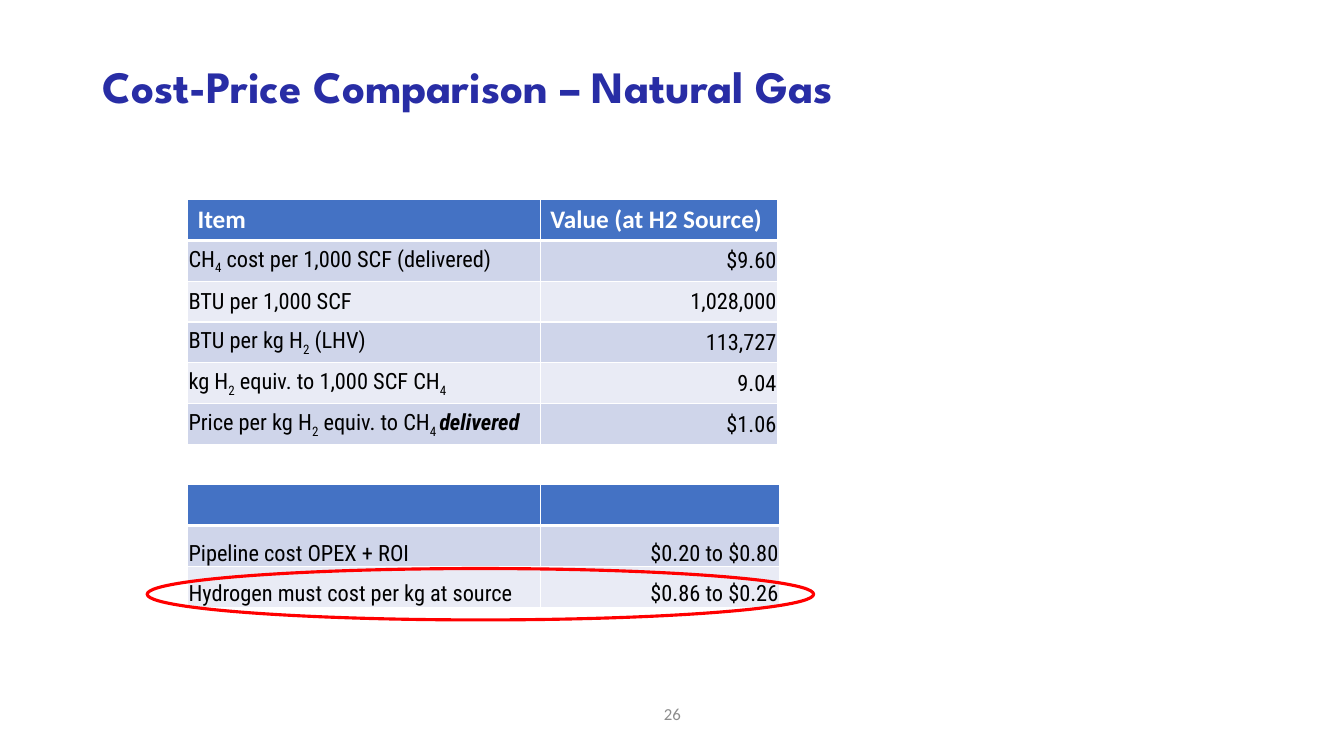
import pptx
import pptx.util
import pptx.dml.color
import pptx.enum.shapes
import pptx.enum.text
import pptx.oxml.ns
from lxml import etree

Inches = pptx.util.Inches
Pt = pptx.util.Pt
ALIGN = pptx.enum.text.PP_ALIGN
ANCHOR = pptx.enum.text.MSO_ANCHOR

COLORS = {
    "title": "282DA5", "number": "8C8C8C", "header": "4472C4",
    "odd_band": "CFD5EA", "even_band": "E9EBF5",
    "white": "FFFFFF", "black": "000000", "highlight": "FF0000",
}
FORMATS = {
    "title": {"size": Pt(32), "name": "League Spartan", "bold": True},
    "number": {"size": Pt(12), "name": "Calibri"},
    "header": {"size": Pt(18), "name": "Calibri", "bold": True},
    "body": {"size": Pt(16), "name": "Roboto Condensed", "bold": False},
}
CELL_MARGINS = {"margin_left": Inches(0.01), "margin_top": Inches(0.01),
                "margin_right": Inches(0.01), "margin_bottom": 0}
ROW_HEIGHT = 0.405

# Each label is a list of (text, style) pieces
SUB, STRONG, PLAIN = "subscript", "strong", "plain"
COST_ROWS = [
    ([("CH", PLAIN), ("4", SUB), (" cost per 1,000 SCF (delivered)", PLAIN)], "$9.60"),
    ([("BTU per 1,000 SCF", PLAIN)], "1,028,000"),
    ([("BTU per kg H", PLAIN), ("2", SUB), (" (LHV)", PLAIN)], "113,727"),
    ([("kg H", PLAIN), ("2", SUB), (" equiv. to 1,000 SCF CH", PLAIN), ("4", SUB)], "9.04"),
    ([("Price per kg H", PLAIN), ("2", SUB), (" equiv. to CH", PLAIN), ("4 ", SUB),
      ("delivered", STRONG)], "$1.06"),
]
PIPELINE_ROWS = [
    ([("Pipeline cost OPEX + ROI", PLAIN)], "$0.20 to $0.80"),
    ([("Hydrogen must cost per kg at source", PLAIN)], "$0.86 to $0.26"),
]


def rgb(color):
    return pptx.dml.color.RGBColor.from_string(COLORS[color])


def set_font(font, style, color):
    for name, value in FORMATS[style].items():
        setattr(font, name, value)
    font.color.rgb = rgb(color)


def add_run(paragraph, text, style, color, piece_style=PLAIN):
    run = paragraph.add_run()
    run.text = text
    set_font(run.font, style, color)
    if piece_style == SUB:
        run.font._element.set("baseline", "-25000")
    elif piece_style == STRONG:
        run.font.bold = run.font.italic = True


def add_text(slide, box, text, style, alignment, line_spacing=1.0):
    shape = slide.shapes.add_textbox(*map(Inches, box))
    frame = shape.text_frame
    frame.word_wrap = True
    frame.vertical_anchor = ANCHOR.MIDDLE
    paragraph = frame.paragraphs[0]
    paragraph.alignment = alignment
    paragraph.line_spacing = line_spacing
    add_run(paragraph, text, style, style)


def format_cell(cell, fill, bottom_width=1):
    """Draw white borders, then fill the cell."""
    properties = cell._tc.get_or_add_tcPr()
    widths = {"a:lnL": 1, "a:lnR": 1, "a:lnT": 1, "a:lnB": bottom_width}
    for tag, width in widths.items():
        border = etree.SubElement(properties, pptx.oxml.ns.qn(tag), w=str(Pt(width)))
        solid = etree.SubElement(border, pptx.oxml.ns.qn("a:solidFill"))
        etree.SubElement(solid, pptx.oxml.ns.qn("a:srgbClr"), val=COLORS["white"])
    cell.fill.solid()
    cell.fill.fore_color.rgb = rgb(fill)


def add_price_table(slide, left, top, column_widths, headings, rows, anchor):
    row_count = len(rows) + 1
    table = slide.shapes.add_table(
        row_count, 2, Inches(left), Inches(top),
        Inches(sum(column_widths)), Inches(ROW_HEIGHT * row_count)).table
    for column, width in zip(table.columns, column_widths):
        column.width = Inches(width)
    for row in table.rows:
        row.height = Inches(ROW_HEIGHT)

    # Header row
    for column_index, heading in enumerate(headings):
        cell = table.cell(0, column_index)
        format_cell(cell, "header", bottom_width=3)
        if heading:
            add_run(cell.text_frame.paragraphs[0], heading, "header", "white")

    # Banded body rows
    for row_index, (label, value) in enumerate(rows, start=1):
        band = "odd_band" if row_index % 2 else "even_band"
        contents = [(label, ALIGN.LEFT), ([(value, PLAIN)], ALIGN.RIGHT)]
        for column_index, (pieces, alignment) in enumerate(contents):
            cell = table.cell(row_index, column_index)
            format_cell(cell, band)
            for name, margin in CELL_MARGINS.items():
                setattr(cell, name, margin)
            cell.vertical_anchor = anchor
            paragraph = cell.text_frame.paragraphs[0]
            paragraph.alignment = alignment
            for text, piece_style in pieces:
                add_run(paragraph, text, "body", "black", piece_style)


def add_highlight(slide, box):
    ellipse = slide.shapes.add_shape(
        pptx.enum.shapes.MSO_SHAPE.OVAL, *map(Inches, box))
    ellipse.shadow.inherit = False
    ellipse.fill.background()
    ellipse.line.color.rgb = rgb("highlight")
    ellipse.line.width = Pt(2.25)


def main():
    presentation = pptx.Presentation()
    presentation.slide_width = Inches(13.33)
    presentation.slide_height = Inches(7.5)
    slide = presentation.slides.add_slide(presentation.slide_layouts[6])

    # Title and slide number
    add_text(slide, (0.92, 0.4, 11.5, 0.97), "Cost-Price Comparison – Natural Gas",
             "title", ALIGN.LEFT, line_spacing=0.9)
    add_text(slide, (5.17, 6.88, 3, 0.4), "26", "number", ALIGN.CENTER)

    # Cost tables and the highlighted result
    add_price_table(slide, 1.86, 1.98, (3.5, 2.35), ("Item", "Value (at H2 Source)"),
                    COST_ROWS, ANCHOR.MIDDLE)
    add_price_table(slide, 1.86, 4.81, (3.5, 2.37), ("", ""),
                    PIPELINE_ROWS, ANCHOR.BOTTOM)
    add_highlight(slide, (1.46, 5.64, 6.61, 0.51))

    presentation.save("out.pptx")


if __name__ == "__main__":
    main()
